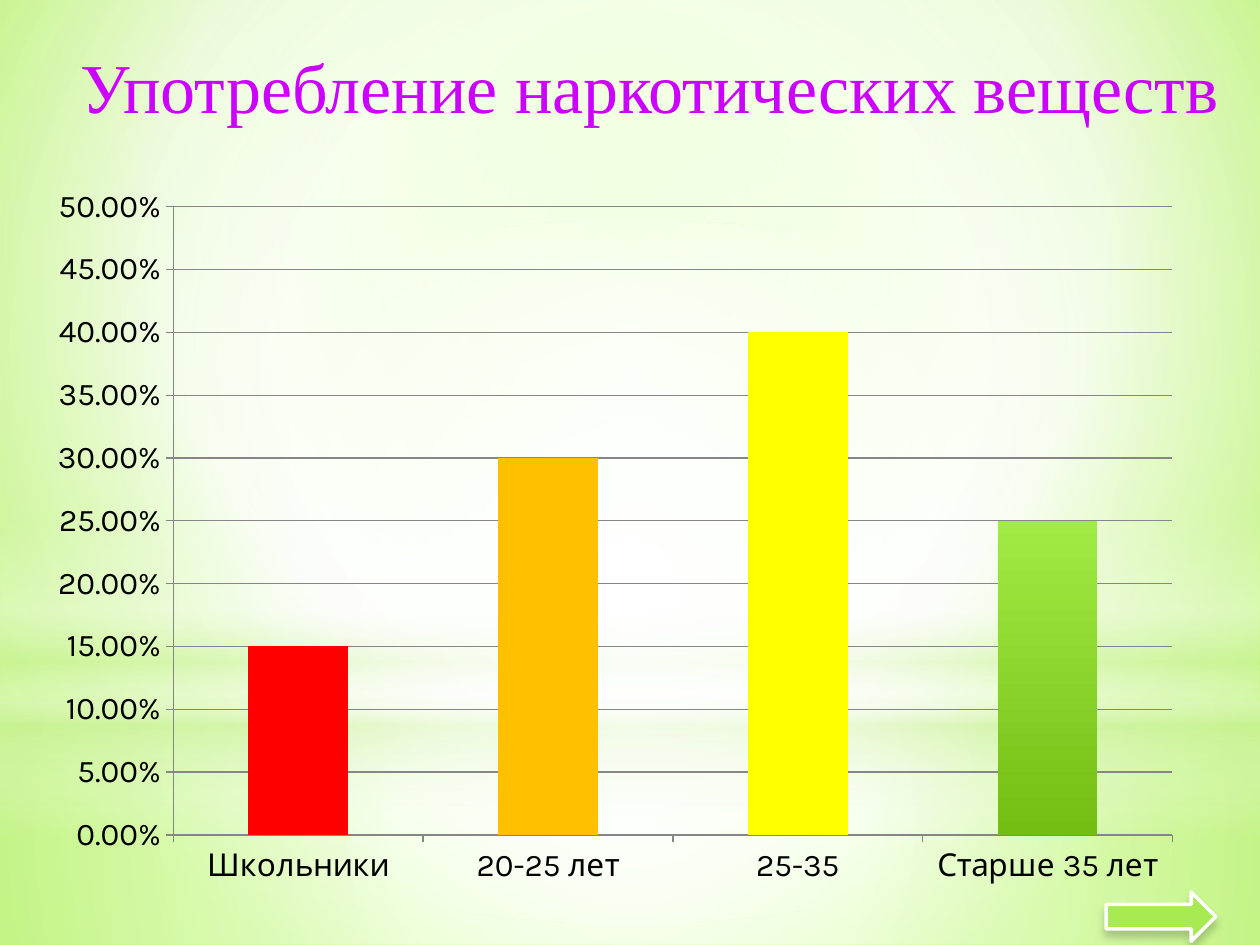
from dataclasses import dataclass

from lxml import etree
from pptx import Presentation
from pptx.chart.data import CategoryChartData
from pptx.dml.color import RGBColor
from pptx.enum import chart as charts, shapes, text
from pptx.oxml import parse_xml
from pptx.oxml.ns import nsdecls, qn
from pptx.util import Inches, Pt


@dataclass(frozen=True)
class Theme:
    width: float = 10
    height: float = 7.5
    heading_font: str = "Times New Roman"
    body_font: str = "Karla"
    heading_size: int = 40
    body_size: int = 18
    heading: str = "CC00FF"
    ink: str = "000000"
    grid: str = "868686"
    white: str = "FFFFFF"
    mist: str = "CAF297"
    arrow: str = "A7EA52"
    bars: tuple = (("FF0000",), ("FFC000",), ("FFFF00",), ("A1EB44", "74BD12"))


THEME = Theme()
CENTRE = (50, 50, 50, 50)


def rgb(value):
    return RGBColor.from_string(value)


def share(x, y, w, h):
    return (Inches(THEME.width * x), Inches(THEME.height * y),
            Inches(THEME.width * w), Inches(THEME.height * h))


def gradient(fill, element, stops, focus=None):
    fill.gradient()
    grad = element.xpath(".//a:gradFill")[0]
    for child in list(grad):
        grad.remove(child)
    gs_list = etree.SubElement(grad, qn("a:gsLst"))
    for position, color, alpha in stops:
        gs = etree.SubElement(gs_list, qn("a:gs"), pos=str(position * 1000))
        clr = etree.SubElement(gs, qn("a:srgbClr"), val=color)
        if alpha < 100:
            etree.SubElement(clr, qn("a:alpha"), val=str(alpha * 1000))
    if focus:
        circle = etree.SubElement(grad, qn("a:path"), {"path": "circle"})
        edges = {side: str(v * 1000) for side, v in zip("ltrb", focus)}
        etree.SubElement(circle, qn("a:fillToRect"), edges)
    else:
        etree.SubElement(grad, qn("a:lin"), ang="5400000", scaled="0")


def add_backdrop(slide):
    gradient(slide.background.fill, slide.element,
             [(0, "C5FF7C", 100), (60, THEME.white, 100), (100, "AAFF3F", 100)],
             (20, 10, 20, 60))
    white, mist = THEME.white, THEME.mist
    rect, oval = shapes.MSO_SHAPE.RECTANGLE, shapes.MSO_SHAPE.OVAL
    layers = [
        (rect, (0, 0.744, 1, 0.256), CENTRE,
         [(0, white, 91), (37, white, 76), (100, mist, 79)]),
        (rect, (0, 0, 1, 0.744), CENTRE,
         [(0, white, 89), (48, white, 62), (100, mist, 79)]),
        (rect, (0, 0.55, 1, 0.333), None,
         [(0, white, 0), (29, white, 30), (45, mist, 40),
          (55, white, 26), (65, mist, 60), (100, white, 0)]),
        (oval, (0, 0.233, 1, 0.744), CENTRE,
         [(0, white, 100), (56, white, 0)]),
    ]
    for kind, box, focus, stops in layers:
        sp = slide.shapes.add_shape(kind, *share(*box))
        sp.shadow.inherit = False
        sp.line.fill.background()
        gradient(sp.fill, sp.element, stops, focus)


def add_heading(slide, box):
    tf = slide.shapes.add_textbox(*box).text_frame
    tf.word_wrap = True
    p = tf.paragraphs[0]
    p.text = "Употребление наркотических веществ"
    p.alignment = text.PP_ALIGN.CENTER
    p.font.name = THEME.heading_font
    p.font.size = Pt(THEME.heading_size)
    p.font.color.rgb = rgb(THEME.heading)


def fix_plot_area(chart, x, y, w, h):
    plot_area = chart.element.xpath(".//c:plotArea")[0]
    for old in plot_area.findall(qn("c:layout")):
        plot_area.remove(old)
    plot_area.insert(0, parse_xml(
        f'<c:layout {nsdecls("c")}><c:manualLayout><c:layoutTarget val="inner"/>'
        '<c:xMode val="edge"/><c:yMode val="edge"/>'
        f'<c:x val="{x}"/><c:y val="{y}"/><c:w val="{w}"/><c:h val="{h}"/>'
        '</c:manualLayout></c:layout>'))


def add_age_chart(slide, box):
    data = CategoryChartData(number_format="0%")
    data.categories = ["Школьники", "20-25 лет", "25-35", "Старше 35 лет"]
    data.add_series("Series 1", (0.15, 0.3, 0.4, 0.25))
    chart = slide.shapes.add_chart(
        charts.XL_CHART_TYPE.COLUMN_CLUSTERED, *box, data).chart
    chart.has_legend = False
    chart.has_title = False
    chart.font.name = THEME.body_font
    chart.font.size = Pt(THEME.body_size)
    chart.font.color.rgb = rgb(THEME.ink)
    fix_plot_area(chart, 0.119, 0.044, 0.861, 0.867)

    values = chart.value_axis
    values.minimum_scale, values.maximum_scale, values.major_unit = 0, 0.5, 0.05
    values.has_major_gridlines = True
    values.tick_labels.number_format = "0.00%"
    values.tick_labels.number_format_is_linked = False
    for axis in (values, chart.category_axis):
        axis.major_tick_mark = charts.XL_TICK_MARK.OUTSIDE
        axis.format.line.color.rgb = rgb(THEME.grid)
        axis.format.line.width = Pt(0.75)
    values.major_gridlines.format.line.color.rgb = rgb(THEME.grid)
    values.major_gridlines.format.line.width = Pt(0.75)

    plot = chart.plots[0]
    plot.gap_width = 150
    plot.vary_by_categories = False
    for i, colors in enumerate(THEME.bars):
        fill = plot.series[0].points[i].format.fill
        if len(colors) == 1:
            fill.solid()
            fill.fore_color.rgb = rgb(colors[0])
            continue
        fill.gradient()
        fill.gradient_angle = 270
        for stop, color in zip(fill.gradient_stops, colors):
            stop.color.rgb = rgb(color)


def add_next_arrow(slide, box):
    sp = slide.shapes.add_shape(shapes.MSO_SHAPE.RIGHT_ARROW, *box)
    sp.fill.solid()
    sp.fill.fore_color.rgb = rgb(THEME.arrow)
    sp.line.color.rgb = rgb(THEME.white)
    sp.line.width = Pt(2)
    sp.shadow.inherit = False
    effects = sp.element.xpath(".//a:effectLst")[0]
    shadow = etree.SubElement(effects, qn("a:outerShdw"), blurRad=str(Pt(5)),
                              dist=str(Pt(4)), dir="5400000", rotWithShape="0")
    color = etree.SubElement(shadow, qn("a:srgbClr"), val=THEME.ink)
    etree.SubElement(color, qn("a:alpha"), val="20000")


def main():
    prs = Presentation()
    prs.slide_width, prs.slide_height = Inches(THEME.width), Inches(THEME.height)
    slide = prs.slides.add_slide(prs.slide_layouts[6])
    add_backdrop(slide)
    add_age_chart(slide, share(0.028, 0.185, 0.921, 0.767))
    add_heading(slide, share(0.051, 0.039, 0.929, 0.103))
    add_next_arrow(slide, share(0.878, 0.944, 0.087, 0.052))
    prs.save("out.pptx")


if __name__ == "__main__":
    main()
